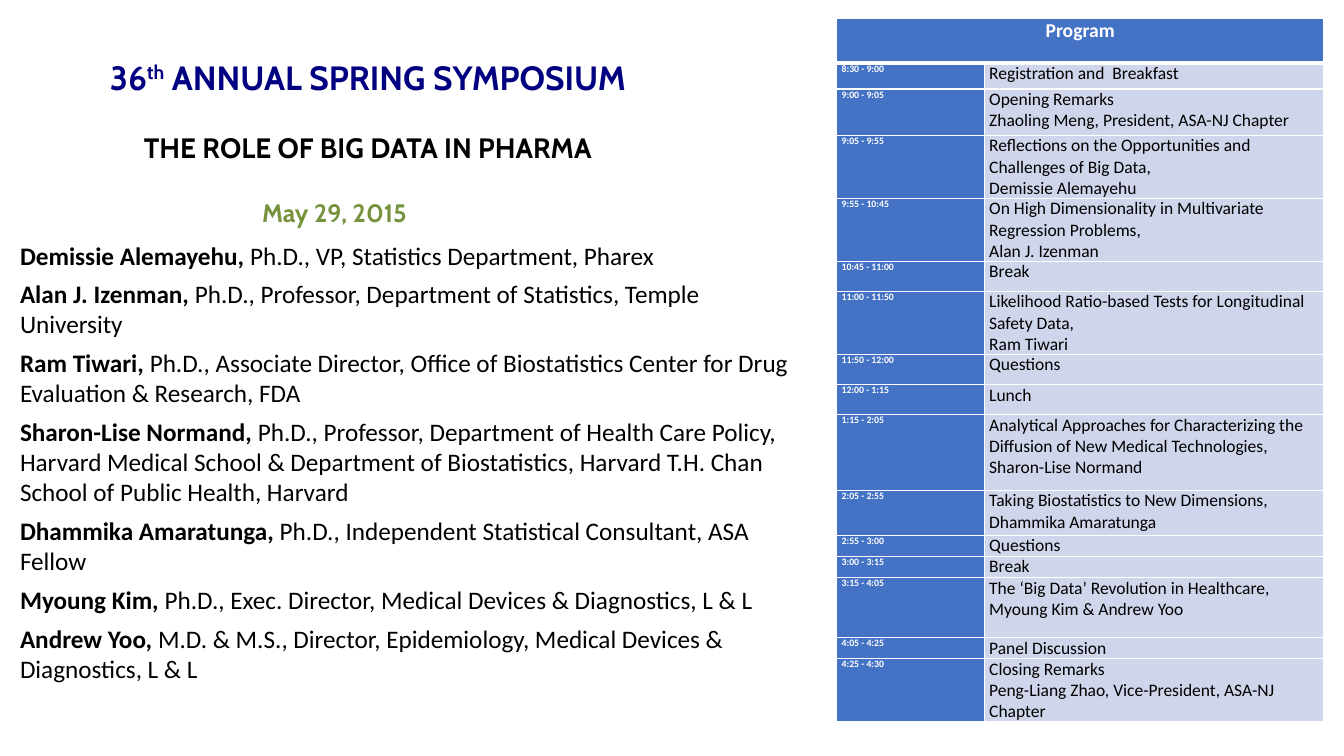
"""Build the symposium slide with its speakers and its programme."""
from dataclasses import dataclass

from lxml import etree
from pptx import Presentation
from pptx.dml.color import RGBColor
from pptx.enum.text import MSO_ANCHOR, MSO_AUTO_SIZE, PP_ALIGN
from pptx.oxml.ns import qn
from pptx.util import Pt

LEFT, CENTER = PP_ALIGN.LEFT, PP_ALIGN.CENTER
TOP = MSO_ANCHOR.TOP
NO_AUTOFIT = MSO_AUTO_SIZE.NONE


@dataclass(frozen=True)
class Theme:
    display: str = "Cabin"
    body: str = "Calibri"
    navy: str = "000081"
    green: str = "76923C"
    black: str = "000000"
    white: str = "FFFFFF"
    blue: str = "4472C4"
    pale: str = "CFD5EA"
    title_size: float = 24
    topic_size: float = 20
    body_size: float = 18
    header_size: float = 14
    session_size: float = 12.5
    time_size: float = 7


@dataclass(frozen=True)
class Heading:
    runs: tuple[str, ...]
    size: float
    color: str
    before: float = 24
    align: int = CENTER
    indent: float = 0


@dataclass(frozen=True)
class Speaker:
    name: str
    role: str


@dataclass(frozen=True)
class Session:
    time: str
    lines: tuple[str, ...]
    height: float


THEME = Theme()
SUPERSCRIPT = "th"
HEADINGS = (
    Heading(("36", SUPERSCRIPT, " ANNUAL SPRING SYMPOSIUM"), THEME.title_size, THEME.navy, 0),
    Heading(("THE ROLE OF BIG DATA IN PHARMA",), THEME.topic_size, THEME.black),
    Heading(("May 29, 2015",), THEME.body_size, THEME.green, align=LEFT, indent=180),
)
SPEAKERS = (
    Speaker("Demissie Alemayehu,", "Ph.D., VP, Statistics Department, Pharex"),
    Speaker("Alan J. Izenman,", "Ph.D., Professor, Department of Statistics, Temple University"),
    Speaker("Ram Tiwari,", "Ph.D., Associate Director, Office of Biostatistics Center for Drug "
            "Evaluation & Research, FDA"),
    Speaker("Sharon-Lise Normand,", "Ph.D., Professor, Department of Health Care Policy, Harvard "
            "Medical School & Department of Biostatistics, Harvard T.H. Chan School of Public "
            "Health, Harvard"),
    Speaker("Dhammika Amaratunga,", "Ph.D., Independent Statistical Consultant, ASA Fellow"),
    Speaker("Myoung Kim,", "Ph.D., Exec. Director, Medical Devices & Diagnostics, L & L"),
    Speaker("Andrew Yoo,", "M.D. & M.S., Director, Epidemiology, Medical Devices & "
            "Diagnostics, L & L"),
)
SESSIONS = (
    Session("8:30 - 9:00", ("Registration and  Breakfast",), 18.7),
    Session("9:00 - 9:05", ("Opening Remarks", "Zhaoling Meng, President, ASA-NJ Chapter"), 33),
    Session("9:05 - 9:55", ("Reflections on the Opportunities and Challenges of Big Data,",
                            "Demissie Alemayehu"), 43),
    Session("9:55 - 10:45", ("On High Dimensionality in Multivariate Regression Problems,",
                             "Alan J. Izenman"), 43),
    Session("10:45 - 11:00", ("Break",), 21.5),
    Session("11:00 - 11:50", ("Likelihood Ratio-based Tests for Longitudinal Safety Data,",
                              "Ram Tiwari"), 43),
    Session("11:50 - 12:00", ("Questions",), 21.5),
    Session("12:00 - 1:15", ("Lunch",), 21.5),
    Session("1:15 - 2:05", ("Analytical Approaches for Characterizing the Diffusion of New "
                            "Medical Technologies,", "Sharon-Lise Normand"), 54),
    Session("2:05 - 2:55", ("Taking Biostatistics to New Dimensions,", "Dhammika Amaratunga"), 32.3),
    Session("2:55 - 3:00", ("Questions",), 12),
    Session("3:00 - 3:15", ("Break",), 12),
    Session("3:15 - 4:05", ("The ‘Big Data’ Revolution in Healthcare,",
                            "Myoung Kim & Andrew Yoo"), 43),
    Session("4:05 - 4:25", ("Panel Discussion",), 12),
    Session("4:25 - 4:30", ("Closing Remarks",
                            "Peng-Liang Zhao, Vice-President, ASA-NJ Chapter"), 32.3),
)
HEADER_HEIGHT = 31.7
COLUMN_WIDTHS = (105.4, 242.6)


def set_font(font, name: str, size: float, color: str, bold: bool | None = None) -> None:
    font.name, font.size, font.bold = name, Pt(size), bold
    font.color.rgb = RGBColor.from_string(color)


def add_headings(s) -> None:
    sp = s.shapes.title
    sp.left, sp.top, sp.width, sp.height = Pt(0), Pt(36.7), Pt(525.6), Pt(131)
    tf = sp.text_frame
    tf.word_wrap, tf.auto_size, tf.vertical_anchor = True, NO_AUTOFIT, TOP
    for i, heading in enumerate(HEADINGS):
        p = tf.add_paragraph() if i else tf.paragraphs[0]
        p.alignment, p.space_before = heading.align, Pt(heading.before)
        p._p.get_or_add_pPr().set("marL", str(Pt(heading.indent)))
        set_font(p.font, THEME.display, heading.size, heading.color, True)
        for text in heading.runs:
            r = p.add_run()
            r.text = text
            if text == SUPERSCRIPT:
                r._r.get_or_add_rPr().set("baseline", "30000")


def add_speakers(s) -> None:
    tf = s.shapes.add_textbox(Pt(7.2), Pt(167.8), Pt(575.3), Pt(326.9)).text_frame
    tf.word_wrap = True
    for i, speaker in enumerate(SPEAKERS):
        p = tf.add_paragraph() if i else tf.paragraphs[0]
        p.space_before = Pt(6 if i else 0)
        set_font(p.font, THEME.body, THEME.body_size, THEME.black)
        for text, bold in ((f"{speaker.name} ", True), (speaker.role, False)):
            r = p.add_run()
            r.text, r.font.bold = text, bold


def set_borders(cell, top: float, bottom: float) -> None:
    tc_pr = cell._tc.get_or_add_tcPr()
    for side, width in (("L", 1), ("R", 1), ("T", top), ("B", bottom)):
        ln = etree.SubElement(tc_pr, qn(f"a:ln{side}"), w=str(Pt(width)))
        fill = etree.SubElement(ln, qn("a:solidFill"))
        etree.SubElement(fill, qn("a:srgbClr"), val=THEME.white)


def fill_cell(cell, lines: tuple[str, ...], size: float, color: str, back: str, bold: bool,
              align: int = LEFT, top: float = 1, bottom: float = 1) -> None:
    set_borders(cell, top, bottom)
    cell.fill.solid()
    cell.fill.fore_color.rgb = RGBColor.from_string(back)
    cell.margin_left = cell.margin_right = Pt(3.6)
    cell.margin_top = cell.margin_bottom = Pt(0)
    tf = cell.text_frame
    for i, line in enumerate(lines):
        p = tf.add_paragraph() if i else tf.paragraphs[0]
        p.alignment = align
        set_font(p.font, THEME.body, size, color, bold)
        p.add_run().text = line


def add_program(s) -> None:
    heights = (HEADER_HEIGHT, *(session.height for session in SESSIONS))
    table = s.shapes.add_table(len(heights), len(COLUMN_WIDTHS), Pt(597.6), Pt(13.2),
                               Pt(sum(COLUMN_WIDTHS)), Pt(sum(heights))).table
    table.first_row = table.horz_banding = False
    for column, width in zip(table.columns, COLUMN_WIDTHS):
        column.width = Pt(width)
    for row, height in zip(table.rows, heights):
        row.height = Pt(height)
    table.cell(0, 0).merge(table.cell(0, 1))
    fill_cell(table.cell(0, 0), ("Program",), THEME.header_size, THEME.white, THEME.blue, True,
              CENTER, bottom=3)
    for i, session in enumerate(SESSIONS, 1):
        top = 3 if i == 1 else 1
        fill_cell(table.cell(i, 0), (session.time,), THEME.time_size, THEME.white, THEME.blue,
                  True, top=top)
        fill_cell(table.cell(i, 1), session.lines, THEME.session_size, THEME.black, THEME.pale,
                  False, top=top)


def main() -> None:
    prs = Presentation()
    prs.slide_width, prs.slide_height = Pt(960), Pt(540)
    s = prs.slides.add_slide(prs.slide_layouts[5])
    add_headings(s)
    add_speakers(s)
    add_program(s)
    prs.save("out.pptx")


if __name__ == "__main__":
    main()
